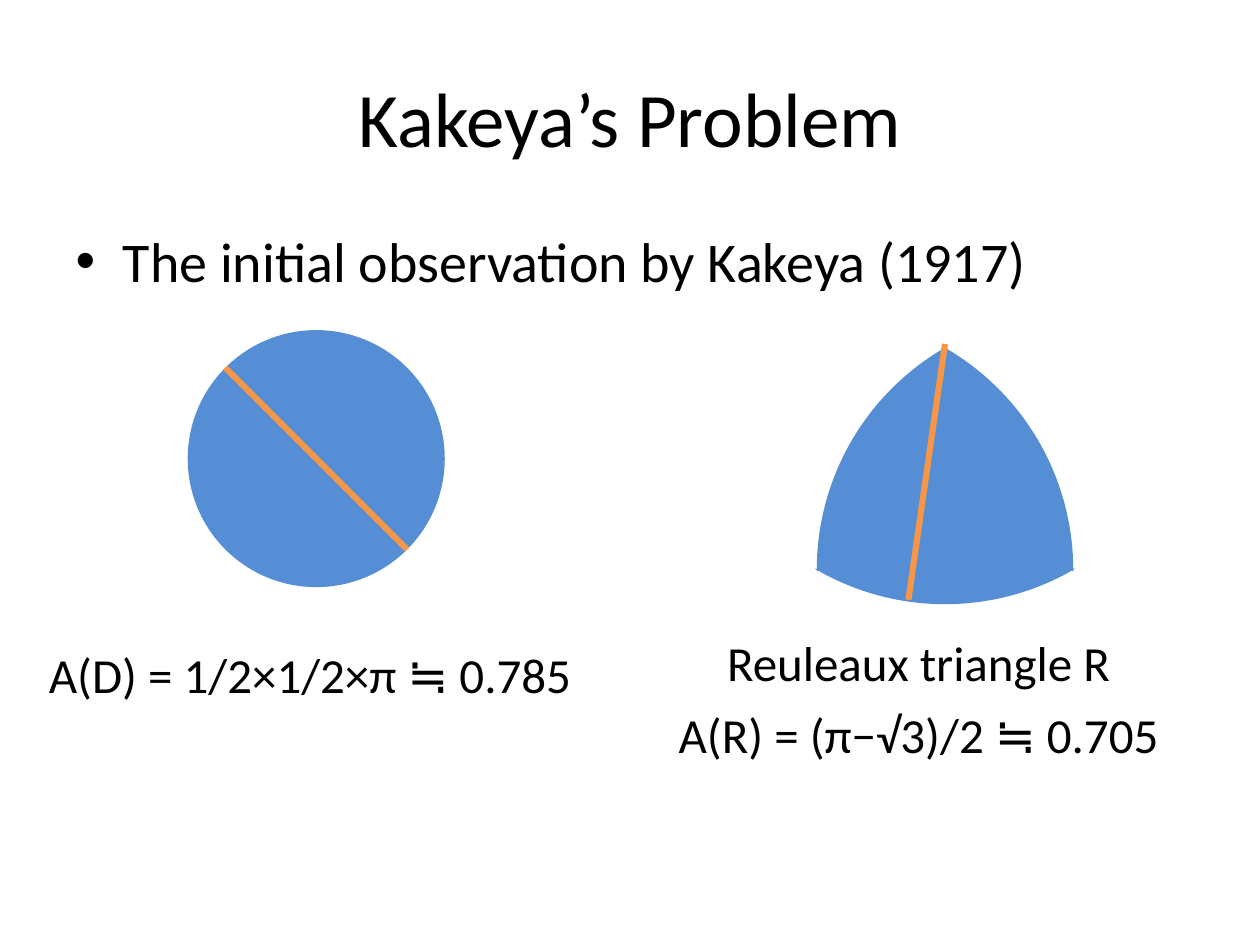
"""Build the Kakeya's Problem slide on a grid of 20 columns by 15 rows."""
from math import sqrt
from typing import NamedTuple

from lxml.etree import SubElement
from pptx import Presentation
from pptx.dml.color import RGBColor as Rgb
from pptx.enum.shapes import MSO_CONNECTOR as Conn, MSO_SHAPE as Kind
from pptx.enum.text import MSO_ANCHOR as Anchor, MSO_AUTO_SIZE as Fit, PP_ALIGN as Align
from pptx.oxml.ns import qn
from pptx.util import Inches, Pt

CELL = Inches(0.5)
FONT = "Calibri"
HUES = {"ink": "000000", "shape": "558ED5", "needle": "F79646"}


class Point(NamedTuple):
    col: float
    row: float


class Box(NamedTuple):
    col: float
    row: float
    cols: float
    rows: float


class Label(NamedTuple):
    text: str
    box: Box


LABELS = [
    Label("A(R) = (π−√3)/2 ≒ 0.705", Box(10.16, 11.08, 8.84, 1.14)),
    Label("A(D) = 1/2×1/2×π ≒ 0.785", Box(0, 10.14, 9.84, 1.14)),
    Label("Reuleaux triangle R", Box(10.16, 9.94, 8.84, 1.14)),
]


def scale(vals) -> list[int]:
    return [round(val * CELL) for val in vals]


def ring(mid: Point, radius: float) -> Box:
    return Box(mid.col - radius, mid.row - radius, 2 * radius, 2 * radius)


def style(text, size: int, align: Align) -> None:
    for para in text.paragraphs:
        para.alignment = align
        para.font.name, para.font.size = FONT, Pt(size)
        para.font.color.rgb = Rgb.from_string(HUES["ink"])


def fill_holder(holder, text: str, box: Box, size: int, align: Align) -> None:
    holder.left, holder.top, holder.width, holder.height = scale(box)
    holder.text_frame.text = text
    style(holder.text_frame, size, align)


def add_form(shapes, kind: Kind, box: Box, turn: float = 0, adjust: tuple = ()) -> None:
    form = shapes.add_shape(kind, *scale(box))
    form.shadow.inherit = False
    form.fill.solid()
    form.fill.fore_color.rgb = Rgb.from_string(HUES["shape"])
    form.line.fill.background()
    form.rotation = turn
    for spot, val in enumerate(adjust):
        form.adjustments[spot] = val


def add_needle(shapes, start: Point, end: Point) -> None:
    line = shapes.add_connector(Conn.STRAIGHT, *scale(start + end))
    line.line.color.rgb = Rgb.from_string(HUES["needle"])
    line.line.width = Pt(3.5)
    SubElement(line._element.spPr, qn("a:effectLst"))


def add_disc(shapes, mid: Point, radius: float) -> None:
    add_form(shapes, Kind.OVAL, ring(mid, radius))
    reach = radius / sqrt(2)
    add_needle(shapes, Point(mid.col - reach, mid.row - reach),
               Point(mid.col + reach, mid.row + reach))


def add_reuleaux(shapes, apex: Point, side: float) -> None:
    """Join a triangle and three arcs, each centred on the opposite corner."""
    group = shapes.add_group_shape().shapes
    left, base = apex.col - side / 2, apex.row + side * sqrt(3) / 2
    add_form(group, Kind.ISOSCELES_TRIANGLE, Box(left, apex.row, side, base - apex.row))
    hubs = {120: Point(left, base), 0: Point(left + side, base), 240: apex}
    for turn, hub in hubs.items():
        add_form(group, Kind.CHORD, ring(hub, side), turn, (107.67, 144.31))


def add_label(shapes, label: Label) -> None:
    text = shapes.add_textbox(*scale(label.box)).text_frame
    text.word_wrap = True
    text.auto_size = Fit.SHAPE_TO_FIT_TEXT
    text.text = label.text
    style(text, 28, Align.CENTER)


def main() -> None:
    deck = Presentation()
    deck.slide_width, deck.slide_height = scale((20, 15))
    slide = deck.slides.add_slide(deck.slide_layouts[1])
    shapes = slide.shapes
    title, body = slide.placeholders
    fill_holder(title, "Kakeya’s Problem", Box(1, 0.6, 18, 2.5), 44, Align.CENTER)
    title.text_frame.vertical_anchor = Anchor.MIDDLE
    fill_holder(body, "The initial observation by Kakeya (1917)",
                Box(1, 3.5, 18, 1.68), 32, Align.LEFT)
    add_disc(shapes, Point(5.02, 7.28), 2.04)
    add_reuleaux(shapes, Point(15, 5.52), 4.07)
    add_needle(shapes, Point(15, 5.46), Point(14.42, 9.52))
    for label in LABELS:
        add_label(shapes, label)
    deck.save("out.pptx")


if __name__ == "__main__":
    main()
